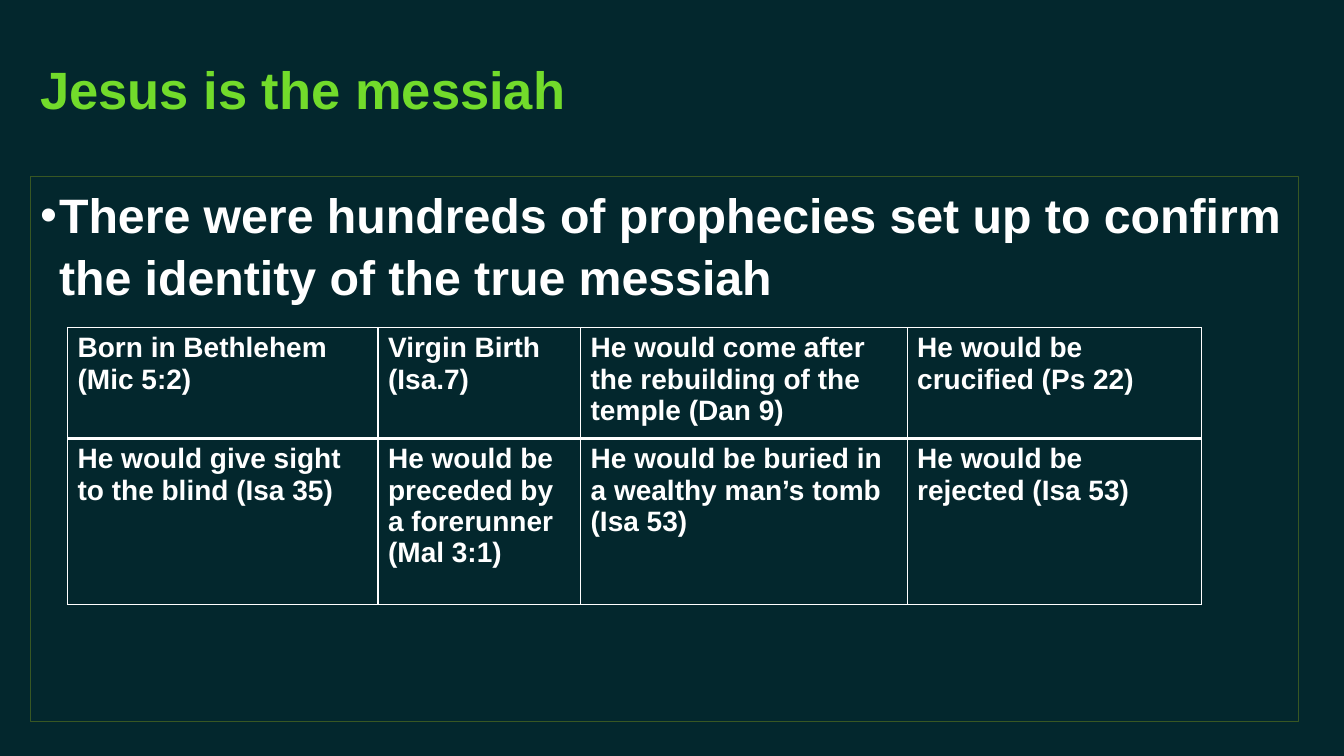
"""Build a slide listing messianic prophecies in a bordered table."""
from lxml import etree
from pptx import Presentation
from pptx.dml.color import RGBColor
from pptx.enum.shapes import MSO_SHAPE
from pptx.enum.text import MSO_ANCHOR, PP_ALIGN
from pptx.oxml.ns import qn
from pptx.util import Pt

RECTANGLE = MSO_SHAPE.RECTANGLE
TOP, MIDDLE = MSO_ANCHOR.TOP, MSO_ANCHOR.MIDDLE
LEFT = PP_ALIGN.LEFT

BACKGROUND = RGBColor(0x03, 0x27, 0x2D)
TITLE_GREEN = RGBColor(0x72, 0xDB, 0x2B)
FRAME_GREEN = RGBColor(0x38, 0x57, 0x23)
WHITE = RGBColor(0xFF, 0xFF, 0xFF)

COLUMN_WIDTHS = [221.76, 144.72, 233.28, 210.24]
ROW_HEIGHTS = [74.3, 118.6]
PROPHECIES = [
    ["Born in Bethlehem (Mic 5:2)", "Virgin Birth (Isa.7)",
     "He would come after the rebuilding of the temple (Dan 9)", "He would be crucified (Ps 22)"],
    ["He would give sight to the blind (Isa 35)", "He would be preceded by a forerunner (Mal 3:1)",
     "He would be buried in a wealthy man’s tomb (Isa 53)", "He would be rejected (Isa 53)"],
]


def style(paragraph, size, color):
    paragraph.alignment = LEFT
    for run in paragraph.runs:
        run.font.name = "Arial"
        run.font.size = Pt(size)
        run.font.bold = True
        run.font.color.rgb = color


def add_border(cell, side, width):
    line = etree.SubElement(cell._tc.get_or_add_tcPr(), qn(f"a:{side}"), w=str(Pt(width)))
    fill = etree.SubElement(line, qn("a:solidFill"))
    etree.SubElement(fill, qn("a:srgbClr"), val=str(WHITE))


presentation = Presentation()
presentation.slide_width = Pt(960)
presentation.slide_height = Pt(540)
slide = presentation.slides.add_slide(presentation.slide_layouts[6])
slide.background.fill.solid()
slide.background.fill.fore_color.rgb = BACKGROUND

title = slide.shapes.add_textbox(Pt(21.6), Pt(10.8), Pt(905.76), Pt(104.4))
title.text_frame.word_wrap = True
title.text_frame.vertical_anchor = MIDDLE
title.text_frame.text = "Jesus is the messiah"
style(title.text_frame.paragraphs[0], 37.5, TITLE_GREEN)

body = slide.shapes.add_shape(RECTANGLE, Pt(21.6), Pt(126), Pt(905.76), Pt(389.52))
body.shadow.inherit = False
body.fill.background()
body.line.color.rgb = FRAME_GREEN
body.line.width = Pt(0.75)
body.text_frame.word_wrap = True
body.text_frame.vertical_anchor = TOP
body.text_frame.text = "There were hundreds of prophecies set up to confirm the identity of the true messiah"
paragraph = body.text_frame.paragraphs[0]
paragraph.line_spacing = 1.07
properties = paragraph._p.get_or_add_pPr()
properties.set("marL", str(Pt(13.5)))
properties.set("indent", str(Pt(-13.5)))
etree.SubElement(properties, qn("a:buFont"), typeface="Arial")
etree.SubElement(properties, qn("a:buChar"), char="•")
style(paragraph, 34.5, WHITE)

table = slide.shapes.add_table(
    len(ROW_HEIGHTS), len(COLUMN_WIDTHS), Pt(48.24), Pt(234),
    Pt(sum(COLUMN_WIDTHS)), Pt(sum(ROW_HEIGHTS))).table
table.first_row = False
table.horz_banding = False
for column, width in zip(table.columns, COLUMN_WIDTHS):
    column.width = Pt(width)
for row_index, texts in enumerate(PROPHECIES):
    table.rows[row_index].height = Pt(ROW_HEIGHTS[row_index])
    for column_index, text in enumerate(texts):
        cell = table.cell(row_index, column_index)
        cell.text_frame.text = text
        style(cell.text_frame.paragraphs[0], 20, WHITE)
        add_border(cell, "lnL", 1)
        add_border(cell, "lnR", 1)
        add_border(cell, "lnT", 1 if row_index == 0 else 3)
        add_border(cell, "lnB", 3 if row_index == 0 else 1)
        cell.fill.background()

presentation.save("out.pptx")
